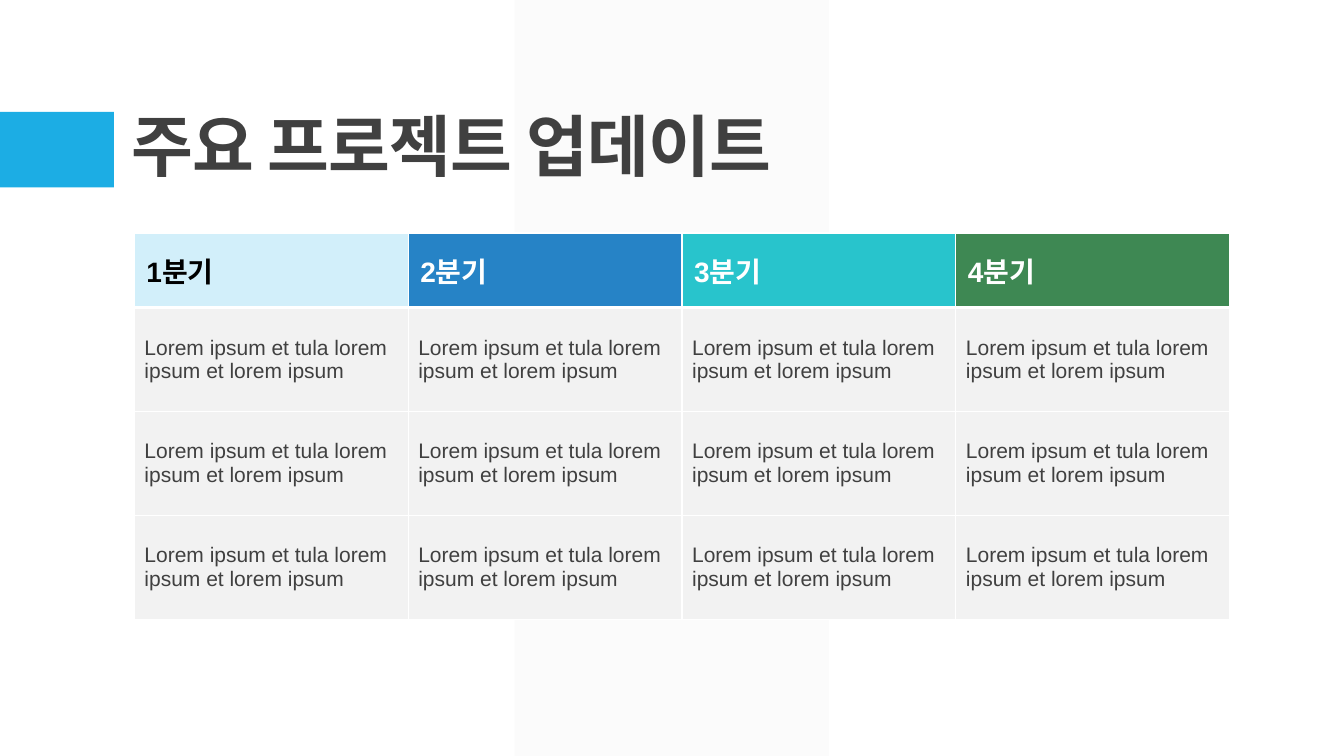
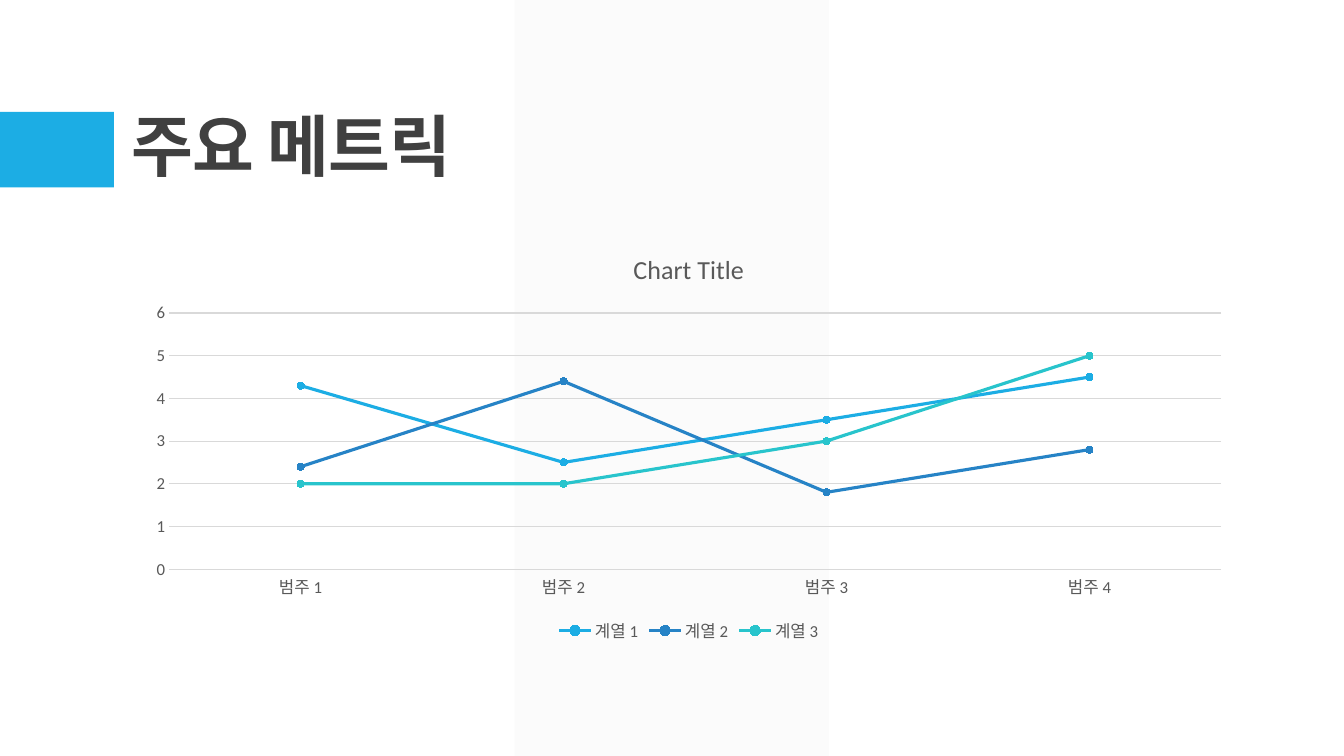
from lxml import etree
from pptx import Presentation
from pptx.chart import data as chart_data
from pptx.dml.color import RGBColor
from pptx.enum import chart as ch, shapes, text
from pptx.oxml import ns
from pptx.util import Pt

SKY, BLUE, TEAL, GREEN = "1CADE4", "2683C6", "28C4CC", "3E8853"
PALE_SKY, PALE_GREY, RULE_GREY = "D2EFFA", "F2F2F2", "D9D9D9"
INK, LABEL_GREY, WHITE, BLACK = "404040", "595959", "FFFFFF", "000000"
CONTENT_LEFT, CONTENT_TOP = 96, 166.4


def rgb(color):
    return RGBColor.from_string(color)


def add_xml(parent, tag, **attributes):
    return etree.SubElement(parent, ns.qn(tag), attributes)


def paint(fill, color):
    fill.solid()
    fill.fore_color.rgb = rgb(color)


def draw_line(line, color, width):
    line.color.rgb = rgb(color)
    line.width = Pt(width)


def set_font(font, size, color, name="Arial", bold=False):
    font.size, font.name, font.bold = Pt(size), name, bold
    font.color.rgb = rgb(color)


def write(frame, content, anchor=text.MSO_ANCHOR.MIDDLE, line_spacing=None,
          tracking=None, **font_format):
    frame.word_wrap = True
    frame.vertical_anchor = anchor
    paragraph = frame.paragraphs[0]
    paragraph.alignment = text.PP_ALIGN.LEFT
    paragraph.line_spacing = line_spacing
    run = paragraph.add_run()
    run.text = content
    set_font(run.font, **font_format)
    if tracking is not None:
        run.font._element.set("spc", str(int(tracking * 100)))


def add_block(slide, kind, left, top, width, height, color):
    block = slide.shapes.add_shape(kind, Pt(left), Pt(top), Pt(width), Pt(height))
    block.shadow.inherit = False
    paint(block.fill, color)
    block.line.fill.background()
    return block


def style_layout(layout, slide):
    """Place the shared title and move the shared blocks behind it."""
    title = layout.placeholders[0]
    title.left, title.top, title.width, title.height = Pt(86.4), Pt(22.3), Pt(792), Pt(114.5)
    band = add_block(slide, shapes.MSO_SHAPE.PARALLELOGRAM, 367.5, 0, 224.6, 540, PALE_GREY)
    band.adjustments[0] = 0
    band_color = band.element.spPr.find(".//" + ns.qn("a:srgbClr"))
    add_xml(band_color, "a:alpha", val="30000")
    tab = add_block(slide, shapes.MSO_SHAPE.RECTANGLE, 0, 79.9, 81.4, 54, SKY)
    for position, block in enumerate((band, tab), start=2):
        layout.shapes.element.insert(position, block.element)


def set_title(slide, content):
    frame = slide.shapes.title.text_frame
    frame.auto_size = text.MSO_AUTO_SIZE.NONE
    write(frame, content, anchor=text.MSO_ANCHOR.BOTTOM, line_spacing=0.9,
          tracking=-0.5, size=48, color=INK, bold=True)


def set_borders(cell, **widths):
    properties = cell._tc.get_or_add_tcPr()
    for side in "LRTB":
        border = add_xml(properties, "a:ln" + side, w=str(Pt(widths.get(side, 1))))
        add_xml(add_xml(border, "a:solidFill"), "a:srgbClr", val=WHITE)


def add_quarter_table(slide, quarters, rows):
    column_width, header_height, row_height = 195.6, 53.3, 74.2
    table = slide.shapes.add_table(
        len(rows) + 1, len(quarters), Pt(CONTENT_LEFT), Pt(CONTENT_TOP),
        Pt(column_width * len(quarters)), Pt(header_height + row_height * len(rows))).table
    table.first_row = table.horz_banding = False
    for column in table.columns:
        column.width = Pt(column_width)
    for index, row in enumerate(table.rows):
        row.height = Pt(row_height if index else header_height)

    for column, (quarter, fill, color) in enumerate(quarters):
        header = table.cell(0, column)
        set_borders(header, B=3)
        paint(header.fill, fill)
        header.margin_left = header.margin_right = Pt(8.6)
        header.margin_top = header.margin_bottom = Pt(4.3)
        write(header.text_frame, quarter, size=20, color=color, bold=True)
        header.vertical_anchor = text.MSO_ANCHOR.MIDDLE
        for index, update in enumerate(rows, start=1):
            cell = table.cell(index, column)
            set_borders(cell, T=3 if index == 1 else 1)
            paint(cell.fill, PALE_GREY)
            write(cell.text_frame, update, size=15, color=INK)
            cell.vertical_anchor = text.MSO_ANCHOR.MIDDLE


def style_axis(axis):
    axis.major_tick_mark = axis.minor_tick_mark = ch.XL_TICK_MARK.NONE
    set_font(axis.tick_labels.font, 12, LABEL_GREY, "Calibri")


def add_metric_chart(slide, heading, categories, metrics):
    figures = chart_data.CategoryChartData()
    figures.categories = categories
    for name, values, _ in metrics:
        figures.add_series(name, values)
    chart = slide.shapes.add_chart(
        ch.XL_CHART_TYPE.LINE_MARKERS, Pt(CONTENT_LEFT), Pt(CONTENT_TOP),
        Pt(792), Pt(295.9), figures).chart
    set_font(chart.font, 10, BLACK, "Calibri")

    # Heading and legend
    chart.has_title = True
    run = chart.chart_title.text_frame.paragraphs[0].add_run()
    run.text = heading
    set_font(run.font, 18.6, LABEL_GREY, "Calibri")
    chart.chart_title.include_in_layout = False
    chart.has_legend = True
    chart.legend.position = ch.XL_LEGEND_POSITION.BOTTOM
    chart.legend.include_in_layout = False
    set_font(chart.legend.font, 12, LABEL_GREY, "Calibri")

    # Axes
    style_axis(chart.category_axis)
    draw_line(chart.category_axis.format.line, RULE_GREY, 0.75)
    scale = chart.value_axis
    style_axis(scale)
    scale.minimum_scale, scale.maximum_scale, scale.major_unit = 0, 6, 1
    scale.format.line.fill.background()
    scale.has_major_gridlines = True
    draw_line(scale.major_gridlines.format.line, RULE_GREY, 0.75)

    # Series
    plot = chart.plots[0]
    plot.vary_by_categories = False
    for series, (_, _, color) in zip(plot.series, metrics):
        series.smooth = False
        draw_line(series.format.line, color, 2.25)
        series.marker.style = ch.XL_MARKER_STYLE.CIRCLE
        series.marker.size = 5
        paint(series.marker.format.fill, color)
        draw_line(series.marker.format.line, color, 0.75)


def main():
    deck = Presentation()
    deck.slide_width, deck.slide_height = Pt(960), Pt(540)
    layout = deck.slide_layouts.get_by_name("Title Only")

    # Project updates
    updates = deck.slides.add_slide(layout)
    style_layout(layout, updates)
    set_title(updates, "주요 프로젝트 업데이트")
    add_quarter_table(
        updates,
        [("1분기", PALE_SKY, BLACK), ("2분기", BLUE, WHITE),
         ("3분기", TEAL, WHITE), ("4분기", GREEN, WHITE)],
        ["Lorem ipsum et tula lorem ipsum et lorem ipsum"] * 3)

    # Key metrics
    key_metrics = deck.slides.add_slide(layout)
    set_title(key_metrics, "주요 메트릭")
    add_metric_chart(
        key_metrics, "Chart Title", [f"범주 {number}" for number in range(1, 5)],
        [("계열 1", (4.3, 2.5, 3.5, 4.5), SKY),
         ("계열 2", (2.4, 4.4, 1.8, 2.8), BLUE),
         ("계열 3", (2, 2, 3, 5), TEAL)])

    deck.save("out.pptx")


if __name__ == "__main__":
    main()
